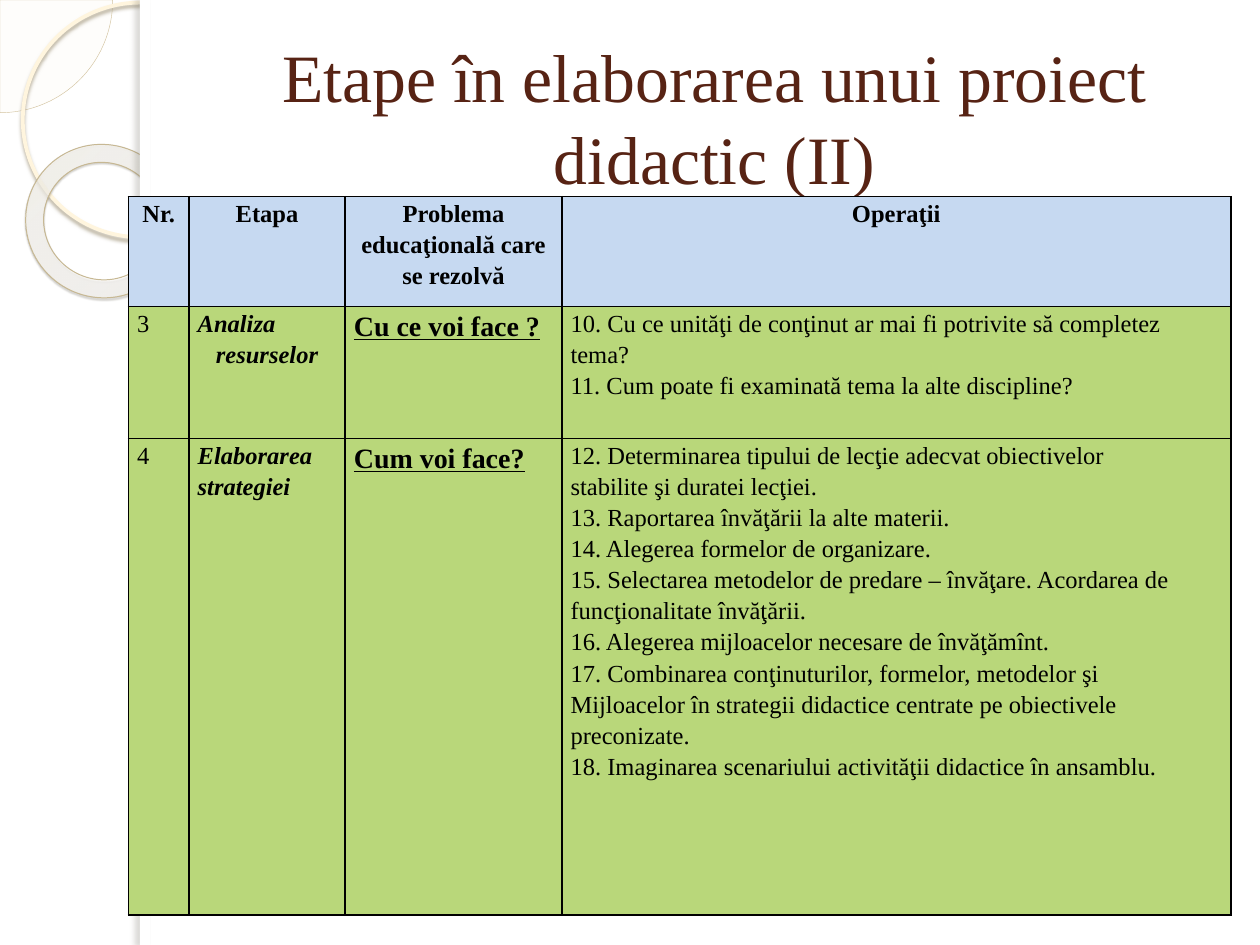
"""Builds a slide on the stages of preparing a lesson plan, with a table of operations."""
import lxml.etree
import pptx
import pptx.dml.color
import pptx.enum.shapes
import pptx.enum.text
import pptx.oxml
import pptx.util

Pt = pptx.util.Pt
Preset = pptx.enum.shapes.MSO_SHAPE
Align = pptx.enum.text.PP_ALIGN
NAMESPACE = 'xmlns:a="http://schemas.openxmlformats.org/drawingml/2006/main"'
FONT = "Times New Roman"
COLORS = {
    "white": "FFFFFF", "black": "000000", "title": "572314",
    "header": "C6D9F1", "body": "B9D77A",
    "pie": "FEFAF4", "pie_line": "D3C39F", "ring_line": "FFF5DE",
    "donut_line": "C7B893", "ring_shadow": "B0A68F",
    "donut_shadow": "5A5444", "bar_shadow": "736F63",
}
TITLE = "Etape în elaborarea unui proiect didactic (II)"
HEADERS = ["Nr.", "Etapa", "Problema\neducaţională care\nse rezolvă", "Operaţii"]
STAGES = [
    ["3", "Analiza\nresurselor", "Cu ce voi face ?", "\n".join([
        "10. Cu ce unităţi de conţinut ar mai fi potrivite să completez",
        "tema?",
        "11. Cum poate fi examinată tema la alte discipline?",
    ])],
    ["4", "Elaborarea\nstrategiei", "Cum voi face?", "\n".join([
        "12. Determinarea tipului de lecţie adecvat obiectivelor",
        "stabilite şi duratei lecţiei.",
        "13. Raportarea învăţării la alte materii.",
        "14. Alegerea formelor de organizare.",
        "15. Selectarea metodelor de predare – învăţare. Acordarea de funcţionalitate învăţării.",
        "16. Alegerea mijloacelor necesare de învăţămînt.",
        "17. Combinarea conţinuturilor, formelor, metodelor şi",
        "Mijloacelor în strategii didactice centrate pe obiectivele preconizate.",
        "18. Imaginarea scenariului activităţii didactice în ansamblu.",
    ])],
]
COLUMN_WIDTHS = [34.6, 89.3, 123.8, 382.3]
ROW_HEIGHTS = [62.8, 75.4, 272.2]
HEADER_STYLE = {"size": 14, "bold": True, "italic": False, "underline": False}
COLUMN_STYLES = [
    {"size": 14, "bold": False, "italic": False, "underline": False},
    {"size": 14, "bold": True, "italic": True, "underline": False},
    {"size": 16, "bold": True, "italic": False, "underline": True},
    {"size": 14, "bold": False, "italic": False, "underline": False},
]
DONUT_STOPS = [(0, "FFFCF6", 70), (70, "FFFEFB", 55), (100, "F0D28E", 60)]


def rgb(name):
    return pptx.dml.color.RGBColor.from_string(COLORS[name])


def add_decor(page, preset, place, fill=None, line=None, width=0, shadow=None):
    shape = page.shapes.add_shape(preset, *map(Pt, place))
    shape.shadow.inherit = False
    if fill:
        shape.fill.solid()
        shape.fill.fore_color.rgb = rgb(fill)
    else:
        shape.fill.background()
    if line:
        shape.line.color.rgb = rgb(line)
        shape.line.width = Pt(width)
    else:
        shape.line.fill.background()
    if shadow:
        color, alpha, blur, distance, angle = shadow
        effects = shape.element.spPr.find(pptx.oxml.ns.qn("a:effectLst"))
        effects.append(pptx.oxml.parse_xml(
            f'<a:outerShdw {NAMESPACE} blurRad="{Pt(blur)}" dist="{Pt(distance)}" '
            f'dir="{angle * 60000}" algn="tl" rotWithShape="0"><a:srgbClr val="{COLORS[color]}">'
            f'<a:alpha val="{alpha * 1000}"/></a:srgbClr></a:outerShdw>'))
    return shape


def add_decoration(page):
    pie = add_decor(page, Preset.PIE, (-64.4, -64.4, 128.8, 128.8), "pie", "pie_line", 0.25)
    pie.adjustments[0], pie.adjustments[1] = 0, 54
    color = pie.element.spPr.find(".//" + pptx.oxml.ns.qn("a:srgbClr"))
    lxml.etree.SubElement(color, pptx.oxml.ns.qn("a:alpha")).set("val", "33000")

    add_decor(page, Preset.OVAL, (13, 1.5, 134, 134), None, "ring_line", 2.15,
              ("ring_shadow", 85, 2, 2, 90))

    donut = add_decor(page, Preset.DONUT, (14.4, 82.8, 88.6, 87.1), None, "donut_line", 0.58,
                      ("donut_shadow", 35, 1, 1, 75))
    donut.adjustments[0] = 0.118
    donut.rotation = 38.6
    stops = "".join(
        f'<a:gs pos="{place * 1000}"><a:srgbClr val="{color}"><a:alpha val="{alpha * 1000}"/>'
        f'</a:srgbClr></a:gs>' for place, color, alpha in DONUT_STOPS)
    properties = donut.element.spPr
    properties.replace(properties.find(pptx.oxml.ns.qn("a:noFill")), pptx.oxml.parse_xml(
        f'<a:gradFill {NAMESPACE} rotWithShape="1"><a:gsLst>{stops}</a:gsLst><a:path path="circle">'
        '<a:fillToRect l="-408000" t="-50000" r="508000" b="150000"/></a:path></a:gradFill>'))

    add_decor(page, Preset.RECTANGLE, (80, 0, 640, 540), "white")
    add_decor(page, Preset.RECTANGLE, (80, 0, 5.8, 540), "white",
              shadow=("bar_shadow", 25, 3, 3, 180))


def format_run(span, color, size, bold=False, italic=False, underline=False):
    span.font.name = FONT
    span.font.size = Pt(size)
    span.font.color.rgb = rgb(color)
    span.font.bold = bold
    span.font.italic = italic
    span.font.underline = underline


def add_title(page):
    title = page.shapes.title
    page.shapes.element.append(title.element)
    title.left, title.top, title.width, title.height = map(Pt, (113, 21.6, 590.4, 90))
    frame = title.text_frame
    frame.text = TITLE
    frame.word_wrap = True
    frame.auto_size = pptx.enum.text.MSO_AUTO_SIZE.NONE
    frame.vertical_anchor = pptx.enum.text.MSO_ANCHOR.MIDDLE
    para = frame.paragraphs[0]
    para.alignment = Align.CENTER
    format_run(para.runs[0], "title", 38.7)


def fill_cell(cell, text, fill, style, alignment):
    properties = cell._tc.get_or_add_tcPr()
    for side in "LRTB":
        properties.append(pptx.oxml.parse_xml(
            f'<a:ln{side} {NAMESPACE} w="{Pt(1)}"><a:solidFill>'
            f'<a:srgbClr val="{COLORS["black"]}"/></a:solidFill></a:ln{side}>'))
    cell.fill.solid()
    cell.fill.fore_color.rgb = rgb(fill)
    cell.margin_left = cell.margin_right = Pt(5)
    cell.margin_top = cell.margin_bottom = 0
    cell.text_frame.text = text
    for para in cell.text_frame.paragraphs:
        para.alignment = alignment
        para.line_spacing = 1.15
        format_run(para.runs[0], "black", **style)


def add_stages(page):
    rows = [HEADERS] + STAGES
    table = page.shapes.add_table(len(rows), len(HEADERS), Pt(73.4), Pt(112.4),
                                  Pt(sum(COLUMN_WIDTHS)), Pt(sum(ROW_HEIGHTS))).table
    table.horz_banding = False
    for column, width in zip(table.columns, COLUMN_WIDTHS):
        column.width = Pt(width)
    for row, height in zip(table.rows, ROW_HEIGHTS):
        row.height = Pt(height)
    for r, texts in enumerate(rows):
        for c, text in enumerate(texts):
            if r == 0:
                fill_cell(table.cell(r, c), text, "header", HEADER_STYLE, Align.CENTER)
            else:
                fill_cell(table.cell(r, c), text, "body", COLUMN_STYLES[c], Align.LEFT)
    table.cell(1, 1).text_frame.paragraphs[1].alignment = Align.CENTER


def main():
    deck = pptx.Presentation()
    deck.slide_width, deck.slide_height = Pt(720), Pt(540)
    page = deck.slides.add_slide(deck.slide_layouts[5])
    page.background.fill.solid()
    page.background.fill.fore_color.rgb = rgb("white")
    add_decoration(page)
    add_title(page)
    add_stages(page)
    deck.save("out.pptx")


if __name__ == "__main__":
    main()
